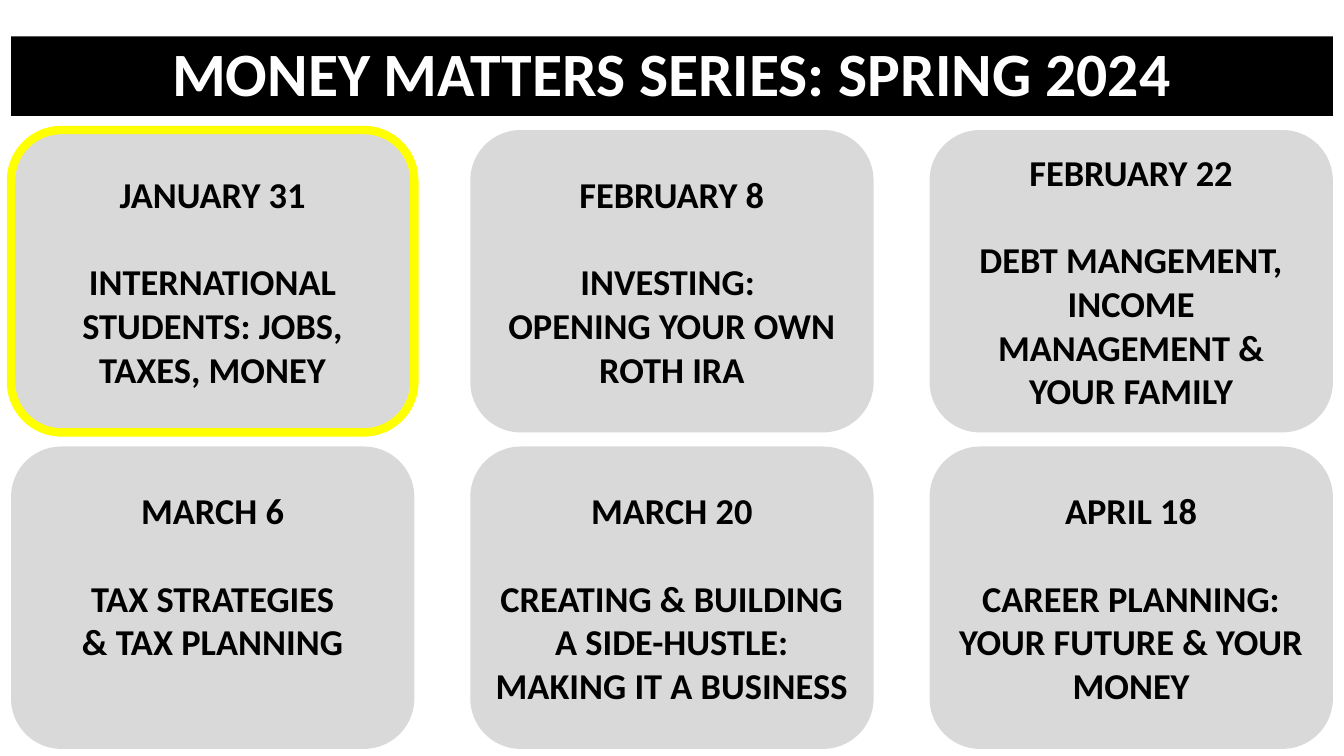
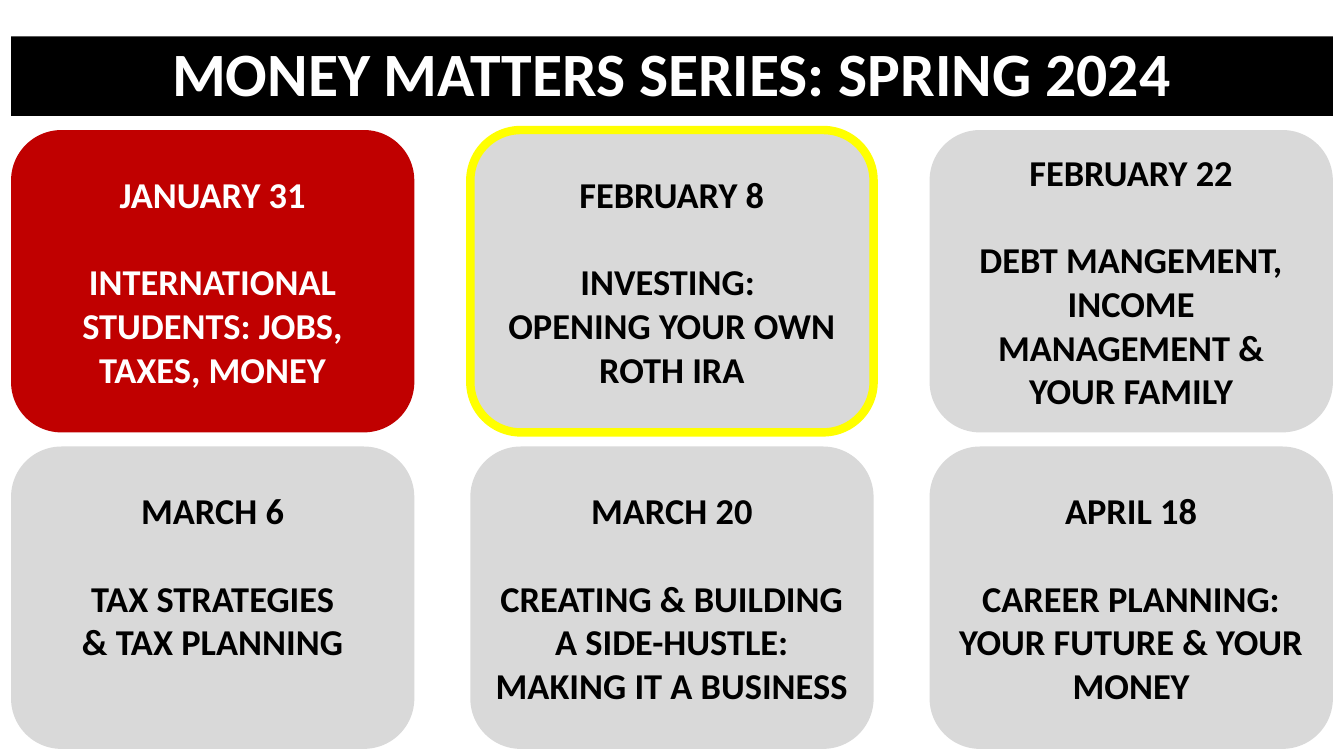
from pptx import Presentation
from pptx.dml.color import RGBColor
from pptx.enum.shapes import MSO_SHAPE
from pptx.enum.text import MSO_ANCHOR, PP_ALIGN
from pptx.util import Inches, Pt

BLACK = RGBColor(0x00, 0x00, 0x00)
WHITE = RGBColor(0xFF, 0xFF, 0xFF)
GREY = RGBColor(0xD9, 0xD9, 0xD9)
RED = RGBColor(0xC0, 0x00, 0x00)
YELLOW = RGBColor(0xFF, 0xFF, 0x00)
RECT = MSO_SHAPE.RECTANGLE
ROUND = MSO_SHAPE.ROUNDED_RECTANGLE
MIDDLE = MSO_ANCHOR.MIDDLE
CENTER = PP_ALIGN.CENTER

FONT = "Calibri"
WIDTH, HEIGHT = 13.33, 7.5
EDGE = 0.11
BAND = (EDGE, 0.36, WIDTH - 2 * EDGE, 0.79)
GRID = (EDGE, 1.29, WIDTH - 2 * EDGE, 6.14)
COLS, ROWS = 3, 2
CARD_W, CARD_H = 4, 3
LINE = 31.25  # height of one line of card text, in points

TITLE = "MONEY MATTERS SERIES: SPRING 2024"
# Date, topic, lines of space kept below the text
EVENTS = [
    ("JANUARY 31", "INTERNATIONAL STUDENTS: JOBS, TAXES, MONEY", 0),
    ("FEBRUARY 8", "INVESTING: \nOPENING YOUR OWN ROTH IRA", 0),
    ("FEBRUARY 22", "DEBT MANGEMENT, INCOME MANAGEMENT & YOUR FAMILY", 0),
    ("MARCH 6", "TAX STRATEGIES\n& TAX PLANNING", 1),
    ("MARCH 20", "CREATING & BUILDING A SIDE-HUSTLE: MAKING IT A BUSINESS", 0),
    ("APRIL 18", "CAREER PLANNING: YOUR FUTURE & YOUR MONEY", 0),
]


def write(shape, texts, size, color, gap=0, spacing=1.0, below=0):
    """Write centred bold paragraphs, with a gap between them."""
    frame = shape.text_frame
    frame.word_wrap = True
    frame.vertical_anchor = MIDDLE
    frame.margin_bottom = Inches(0.05) + Pt(below)
    for i, text in enumerate(texts):
        para = frame.paragraphs[0] if i == 0 else frame.add_paragraph()
        para.text = text
        para.alignment = CENTER
        para.line_spacing = spacing
        para.space_before = Pt(gap if i else 0)
        for run in para.runs:
            font = run.font
            font.name, font.size, font.bold = FONT, Pt(size), True
            font.color.rgb = color


def block(slide, kind, box, fill, edge=None):
    """Add a flat filled shape, outlined only if edge is given."""
    shape = slide.shapes.add_shape(kind, *(Inches(n) for n in box))
    shape.shadow.inherit = False
    shape.fill.solid()
    shape.fill.fore_color.rgb = fill
    if edge is None:
        shape.line.fill.background()
    else:
        shape.line.color.rgb = edge
        shape.line.width = Pt(6)
    return shape


def banner(slide, box):
    write(block(slide, RECT, box, BLACK), [TITLE], 44, WHITE, spacing=0.9)


def cards(slide, box, now):
    """Lay out the events: past ones red, the current one outlined."""
    left, top, width, height = box
    step_x = (width - CARD_W) / (COLS - 1)
    step_y = (height - CARD_H) / (ROWS - 1)
    for i, (date, topic, spare) in enumerate(EVENTS):
        row, col = divmod(i, COLS)
        place = (left + col * step_x, top + row * step_y, CARD_W, CARD_H)
        past = i < now
        card = block(slide, ROUND, place, RED if past else GREY,
                     YELLOW if i == now else None)
        write(card, [date, topic], 26, WHITE if past else BLACK,
              gap=LINE, below=spare * LINE)


def main():
    deck = Presentation()
    deck.slide_width, deck.slide_height = Inches(WIDTH), Inches(HEIGHT)
    for now in range(2):
        slide = deck.slides.add_slide(deck.slide_layouts[6])
        banner(slide, BAND)
        cards(slide, GRID, now)
    deck.save("out.pptx")


if __name__ == "__main__":
    main()
